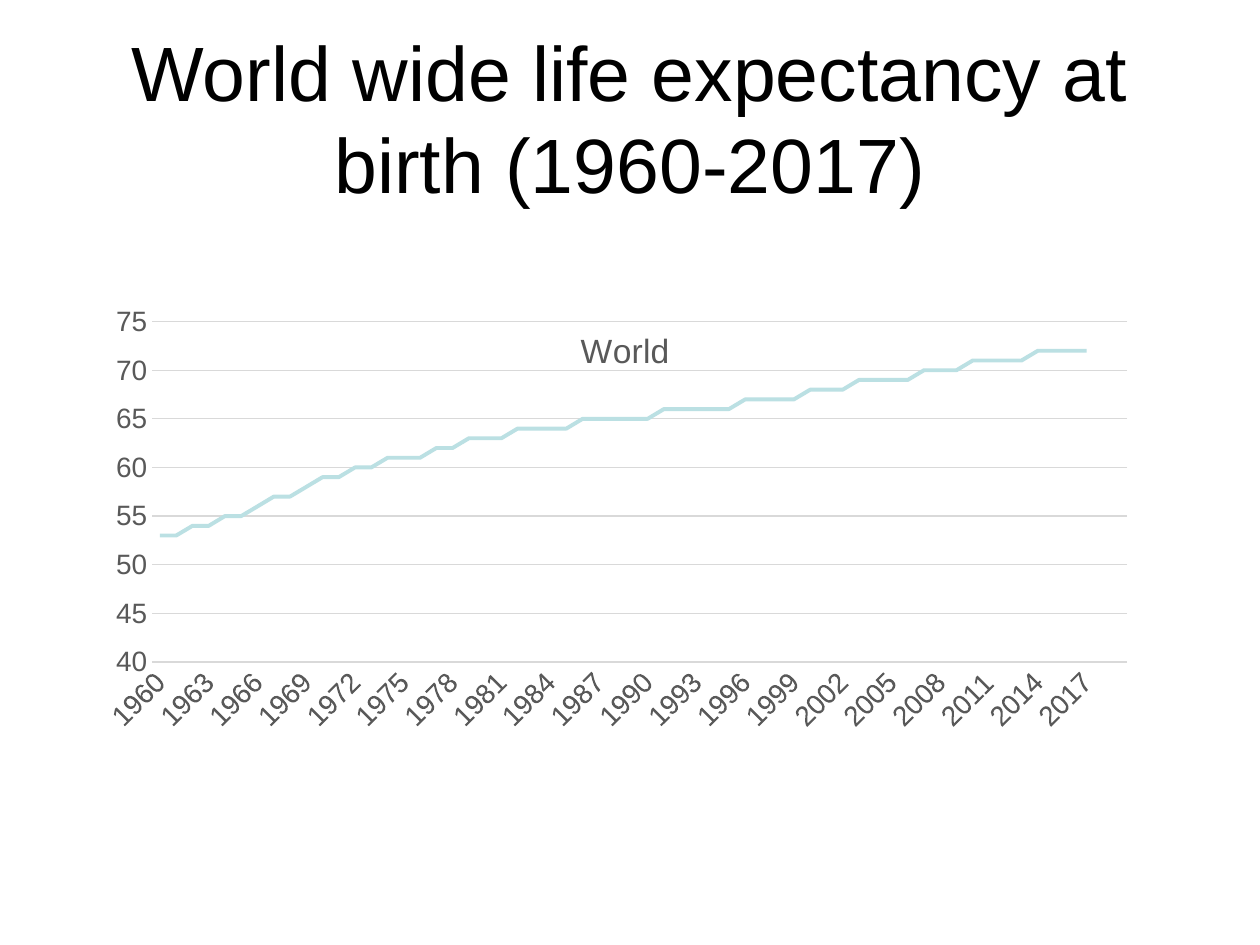
import typing

import lxml.etree
import pptx
import pptx.chart.data
import pptx.dml.color
import pptx.enum.chart
import pptx.enum.text
import pptx.oxml.ns
import pptx.util

Cm = pptx.util.Cm
Pt = pptx.util.Pt
RGBColor = pptx.dml.color.RGBColor
qn = pptx.oxml.ns.qn

BLACK = RGBColor(0x00, 0x00, 0x00)
GREY = RGBColor(0x59, 0x59, 0x59)
PALE = RGBColor(0xD9, 0xD9, 0xD9)
TEAL = RGBColor(0xBB, 0xE0, 0xE3)
FONT = "Arial"

START = 1960
YEARS = [
    53, 53, 54, 54, 55, 55, 56, 57, 57, 58,
    59, 59, 60, 60, 61, 61, 61, 62, 62, 63,
    63, 63, 64, 64, 64, 64, 65, 65, 65, 65,
    65, 66, 66, 66, 66, 66, 67, 67, 67, 67,
    68, 68, 68, 69, 69, 69, 69, 70, 70, 70,
    71, 71, 71, 71, 72, 72, 72, 72,
]
SPARE = 2  # empty places after the last year


class Box(typing.NamedTuple):
    """Place inside the chart, in fractions of its size."""
    x: float
    y: float
    w: float = 0
    h: float = 0


def style(font, size: float, color: RGBColor) -> None:
    font.name = FONT
    font.size = Pt(size)
    font.bold = False
    font.color.rgb = color


def add(parent, tag: str, val=None):
    node = lxml.etree.SubElement(parent, qn(tag))
    if val is not None:
        node.set("val", str(val))
    return node


def place(parent, index: int, box: Box) -> None:
    """Give a chart part a manual layout as its child at index."""
    for old in parent.findall(qn("c:layout")):
        parent.remove(old)
    layout = parent.makeelement(qn("c:layout"), {})
    parent.insert(index, layout)
    manual = add(layout, "c:manualLayout")
    if box.w:
        add(manual, "c:layoutTarget", "inner")
    add(manual, "c:xMode", "edge")
    add(manual, "c:yMode", "edge")
    for name, val in box._asdict().items():
        if val:
            add(manual, f"c:{name}", val)


def trim(axis) -> None:
    """Set the look that both axes share."""
    axis.major_tick_mark = pptx.enum.chart.XL_TICK_MARK.NONE
    axis.minor_tick_mark = pptx.enum.chart.XL_TICK_MARK.NONE
    style(axis.tick_labels.font, 16, GREY)


def rule(line) -> None:
    line.color.rgb = PALE
    line.width = Pt(0.75)


def draw(slide) -> None:
    data = pptx.chart.data.CategoryChartData(number_format="0")
    data.categories = [str(START + i) for i in range(len(YEARS))] + [""] * SPARE
    data.add_series("World", YEARS + [None] * SPARE)
    chart = slide.shapes.add_chart(
        pptx.enum.chart.XL_CHART_TYPE.LINE,
        Cm(1.75), Cm(6.18), Cm(21.85), Cm(9.55), data).chart
    style(chart.font, 16, BLACK)
    chart.has_legend = False

    chart.has_title = True
    chart.chart_title.text_frame.text = "World"
    style(chart.chart_title.text_frame.paragraphs[0].runs[0].font, 19.2, GREY)
    title = chart.chart_title._element
    place(title, 1, Box(0.45, 0.03))
    title.find(qn("c:overlay")).set("val", "1")
    area = title.getparent().find(qn("c:plotArea"))
    place(area, 0, Box(0.06, 0.03, 0.9, 0.72))

    years = chart.category_axis
    trim(years)
    rule(years.format.line)
    axis = years._element
    axis.find(qn("c:txPr")).find(qn("a:bodyPr")).set("rot", "-2700000")
    skip = axis.makeelement(qn("c:tickLblSkip"), {"val": "3"})
    axis.find(qn("c:noMultiLvlLbl")).addprevious(skip)

    ages = chart.value_axis
    trim(ages)
    ages.minimum_scale = 40
    ages.maximum_scale = 75
    ages.major_unit = 5
    ages.tick_labels.number_format = "0"
    ages.tick_labels.number_format_is_linked = False
    ages.format.line.fill.background()
    ages.has_major_gridlines = True
    rule(ages.major_gridlines.format.line)

    world = chart.plots[0].series[0]
    chart.plots[0].vary_by_categories = False
    world.smooth = False
    world.marker.style = pptx.enum.chart.XL_MARKER_STYLE.NONE
    world.format.line.color.rgb = TEAL
    world.format.line.width = Pt(2.25)


def main() -> None:
    deck = pptx.Presentation()
    deck.slide_width = Cm(25.4)
    deck.slide_height = Cm(19.05)
    slide = deck.slides.add_slide(deck.slide_layouts[5])

    head = slide.shapes.title
    head.left, head.top = Cm(1.27), Cm(0.76)
    head.width, head.height = Cm(22.86), Cm(3.18)
    frame = head.text_frame
    frame.text = "World wide life expectancy at birth (1960-2017)"
    frame.vertical_anchor = pptx.enum.text.MSO_ANCHOR.MIDDLE
    frame.paragraphs[0].alignment = pptx.enum.text.PP_ALIGN.CENTER
    style(frame.paragraphs[0].runs[0].font, 44, BLACK)

    draw(slide)
    deck.save("out.pptx")


if __name__ == "__main__":
    main()
